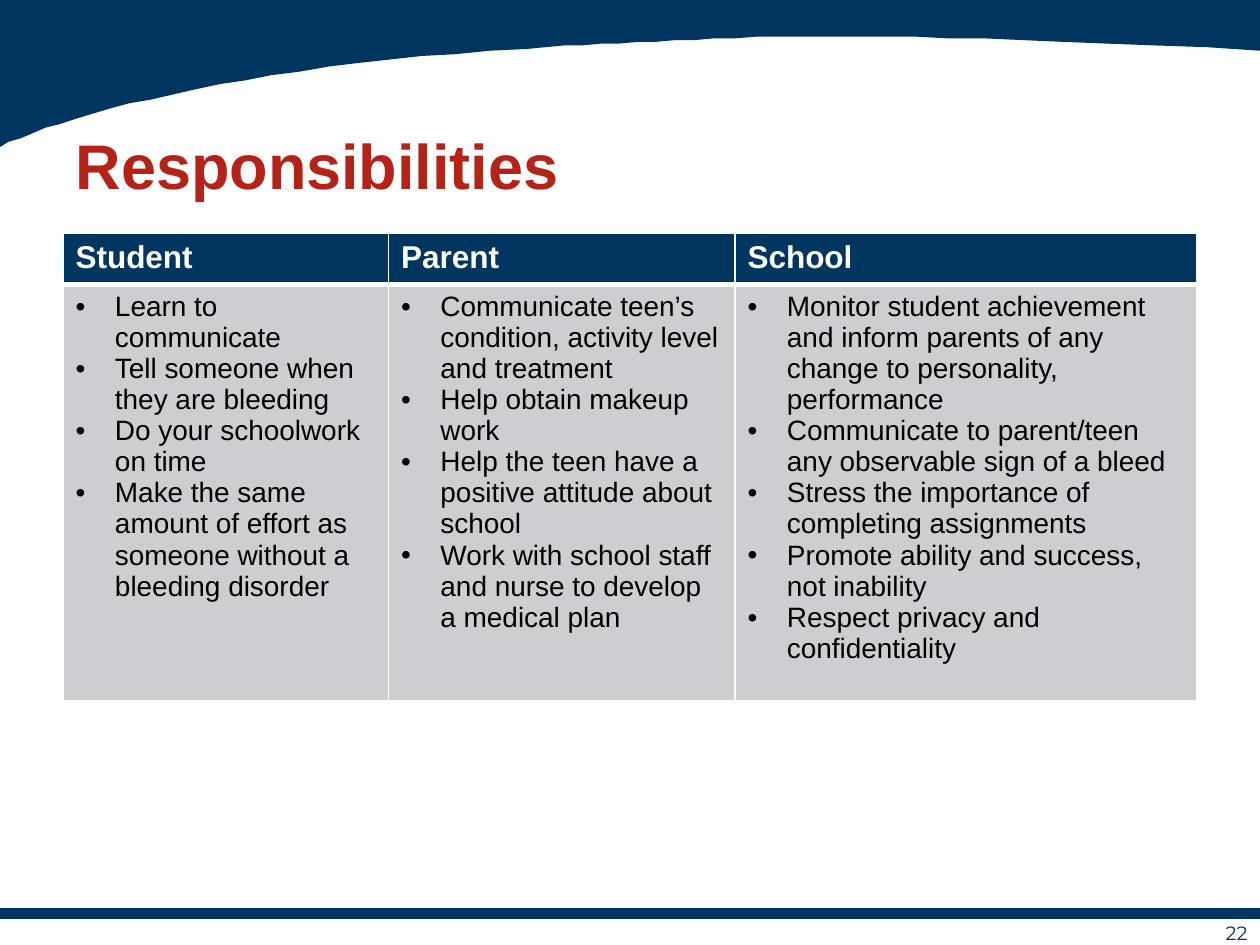
from lxml.etree import SubElement
from pptx import Presentation
from pptx.dml.color import RGBColor
from pptx.enum.shapes import MSO_CONNECTOR as Connector
from pptx.enum.text import MSO_ANCHOR as Anchor, PP_ALIGN as Align
from pptx.oxml.ns import qn
from pptx.util import Pt

NAVY = RGBColor(0x00, 0x35, 0x5F)
RED = RGBColor(0xB3, 0x23, 0x17)
GREY = RGBColor(0xCC, 0xCE, 0xD2)
WHITE = RGBColor(0xFF, 0xFF, 0xFF)
BLACK = RGBColor(0x00, 0x00, 0x00)

PAGE_WIDTH, PAGE_HEIGHT = 720, 540
INDENT = 22.5
CURVES = [
    ((720, 28.8), (468.6, 15.2), (408, 22.2), (321.8, 26.5)),
    ((321.8, 26.5), (149.8, 34.6), (41, 64.8), (0, 83.5)),
]
DUTIES = {
    "Student": (186, [
        "Learn to communicate",
        "Tell someone when they are bleeding",
        "Do your schoolwork on time",
        "Make the same amount of effort as someone without a bleeding disorder",
    ]),
    "Parent": (198, [
        "Communicate teen’s condition, activity level and treatment",
        "Help obtain makeup work",
        "Help the teen have a positive attitude about school",
        "Work with school staff and nurse to develop a medical plan",
    ]),
    "School": (264, [
        "Monitor student achievement and inform parents of any change to personality, performance",
        "Communicate to parent/teen any observable sign of a bleed",
        "Stress the importance of completing assignments",
        "Promote ability and success, not inability",
        "Respect privacy and confidentiality",
    ]),
}


def style(para, size, color, bold=False, name="Arial"):
    """Set the font of a whole paragraph."""
    font = para.font
    font.name, font.size, font.bold = name, Pt(size), bold
    font.color.rgb = color


def curve_points(start, first, second, end, steps=24):
    """Return points along a cubic curve, leaving out its start."""
    points = []
    for step in range(1, steps + 1):
        t = step / steps
        weights = ((1 - t) ** 3, 3 * t * (1 - t) ** 2, 3 * t * t * (1 - t), t ** 3)
        points.append(tuple(
            sum(weight * value for weight, value in zip(weights, axis))
            for axis in zip(start, first, second, end)
        ))
    return points


def add_banner(page):
    """Draw the curved band along the top."""
    points = [(PAGE_WIDTH, 0), CURVES[0][0]]
    for curve in CURVES:
        points += curve_points(*curve)
    builder = page.shapes.build_freeform(0, 0, scale=Pt(1))
    builder.add_line_segments(points, close=True)
    banner = builder.convert_to_shape()
    banner.shadow.inherit = False
    banner.fill.solid()
    banner.fill.fore_color.rgb = NAVY
    banner.line.fill.background()


def add_footer_rule(page):
    """Draw the thick line above the page number."""
    rule = page.shapes.add_connector(
        Connector.STRAIGHT, Pt(0), Pt(522), Pt(PAGE_WIDTH), Pt(522))
    rule.line.color.rgb = NAVY
    rule.line.width = Pt(6.75)
    SubElement(rule._element.spPr, qn("a:effectLst"))


def add_title(page, text):
    """Fill and place the title placeholder."""
    title = page.shapes.title
    title.left, title.top, title.width, title.height = Pt(36), Pt(57.6), Pt(648), Pt(72)
    title.text_frame.text = text
    title.text_frame.vertical_anchor = Anchor.MIDDLE
    para = title.text_frame.paragraphs[0]
    para.alignment = Align.LEFT
    style(para, 36, RED, bold=True)


def add_borders(cell, **widths):
    """Give a cell white borders, with widths keyed by side."""
    properties = cell._tc.get_or_add_tcPr()
    for side in "LRTB":
        line = SubElement(properties, qn(f"a:ln{side}"), w=str(Pt(widths.get(side, 1))))
        fill = SubElement(line, qn("a:solidFill"))
        SubElement(fill, qn("a:srgbClr"), val=str(WHITE))


def fill_cell(cell, color):
    """Give a cell a plain fill."""
    cell.fill.solid()
    cell.fill.fore_color.rgb = color


def add_bullet(para):
    """Give a paragraph a hanging round bullet."""
    properties = para._p.get_or_add_pPr()
    properties.set("marL", str(Pt(INDENT)))
    properties.set("indent", str(-Pt(INDENT)))
    SubElement(properties, qn("a:buFont"), typeface="Arial")
    SubElement(properties, qn("a:buChar"), char="•")


def add_duties_table(page):
    """Build the table of duties, one column for each role."""
    table = page.shapes.add_table(
        2, len(DUTIES), Pt(36), Pt(133.5), Pt(648), Pt(267)).table
    table.rows[0].height, table.rows[1].height = Pt(29.2), Pt(237.8)
    for index, (role, (width, duties)) in enumerate(DUTIES.items()):
        table.columns[index].width = Pt(width)
        header, body = table.cell(0, index), table.cell(1, index)
        add_borders(header, B=3)
        fill_cell(header, NAVY)
        header.text = role
        style(header.text_frame.paragraphs[0], 18, WHITE, bold=True)
        add_borders(body, T=3)
        fill_cell(body, GREY)
        body.text = "\n".join(duties)
        for para in body.text_frame.paragraphs:
            add_bullet(para)
            style(para, 16, BLACK)


def add_page_number(page, number):
    """Write the page number at the bottom right."""
    box = page.shapes.add_textbox(Pt(635.8), Pt(527), Pt(84.2), Pt(12.2))
    frame = box.text_frame
    frame.word_wrap = True
    frame.margin_top = frame.margin_bottom = 0
    frame.vertical_anchor = Anchor.MIDDLE
    frame.text = number
    para = frame.paragraphs[0]
    para.alignment = Align.RIGHT
    style(para, 11, NAVY, name="Montserrat")


def main():
    """Build and save the deck."""
    deck = Presentation()
    deck.slide_width, deck.slide_height = Pt(PAGE_WIDTH), Pt(PAGE_HEIGHT)
    page = deck.slides.add_slide(deck.slide_layouts[5])
    add_footer_rule(page)
    add_banner(page)
    add_title(page, "Responsibilities")
    add_duties_table(page)
    add_page_number(page, "22")
    deck.save("out.pptx")


if __name__ == "__main__":
    main()
